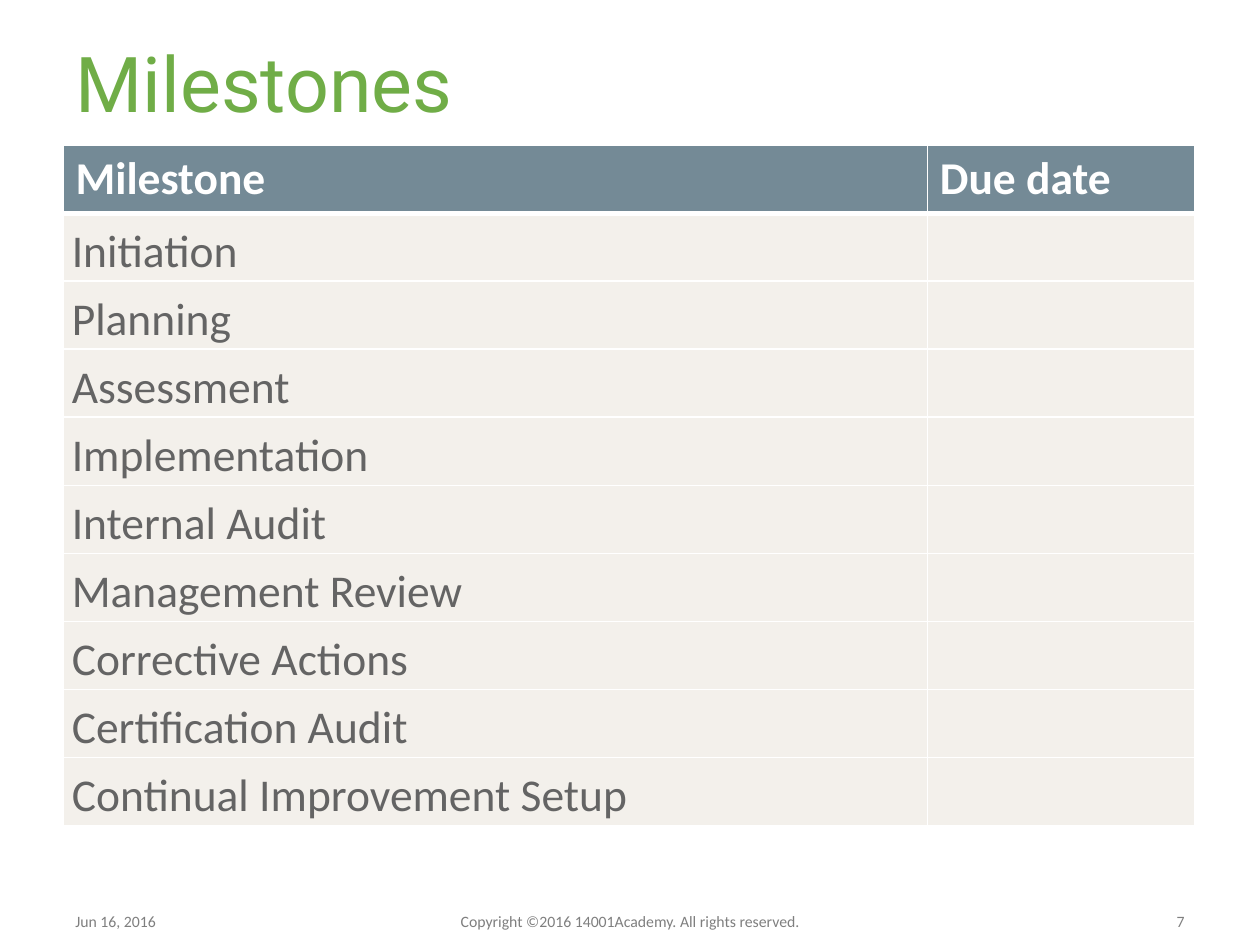
"""Build the project milestones slide with its table and footer."""
from lxml.etree import SubElement
from pptx import Presentation
from pptx.dml.color import RGBColor as Color
from pptx.enum.text import MSO_ANCHOR as Anchor, PP_ALIGN as Align
from pptx.oxml.ns import qn
from pptx.util import Inches, Pt

TITLE = "Milestones"
HEADINGS = ["Milestone", "Due date"]
MILESTONES = [
    "Initiation", "Planning", "Assessment", "Implementation", "Internal Audit",
    "Management Review", "Corrective Actions", "Certification Audit",
    "Continual Improvement Setup",
]
FOOTERS = [
    ("Jun 16, 2016", 0.5, 2.33, Align.LEFT),
    ("Copyright ©2016 14001Academy. All rights reserved.", 3.03, 3.94, Align.CENTER),
    ("7", 7.17, 2.33, Align.RIGHT),
]
COLORS = {"title": "70AD47", "header": "748A96", "body": "F3F0EB",
          "text": "646464", "footer": "7F7F7F", "white": "FFFFFF"}
MARGIN = 0.5
TABLE_TOP = 1.15
COLUMNS = [6.86, 2.12]
ROW_HEIGHT = 0.54
FOOTER_TOP, FOOTER_HEIGHT = 7.13, 0.37


def style(paragraph, size, color, name="Calibri", bold=False):
    font = paragraph.font
    font.size, font.name, font.bold = Pt(size), name, bold
    font.color.rgb = Color.from_string(COLORS[color])


def set_borders(cell, top, bottom):
    properties = cell._tc.get_or_add_tcPr()
    for side, width in (("L", 1), ("R", 1), ("T", top), ("B", bottom)):
        line = SubElement(properties, qn(f"a:ln{side}"), w=str(Pt(width)))
        fill = SubElement(line, qn("a:solidFill"))
        SubElement(fill, qn("a:srgbClr"), val=COLORS["white"])


def fill_cell(cell, text, row):
    header = row == 0
    set_borders(cell, 3 if row == 1 else 1, 3 if header else 1)
    cell.fill.solid()
    cell.fill.fore_color.rgb = Color.from_string(COLORS["header" if header else "body"])
    cell.vertical_anchor = Anchor.MIDDLE
    if not text:
        return
    cell.margin_left = cell.margin_right = Inches(0.1 if header else 0.07)
    cell.margin_top = cell.margin_bottom = Inches(0.05 if header else 0)
    cell.text = text
    paragraph = cell.text_frame.paragraphs[0]
    if not header:
        paragraph.line_spacing = 1.15
    style(paragraph, 26, "white" if header else "text", bold=header)


def add_title(page):
    title = page.shapes.title
    title.left, title.top = Inches(MARGIN), 0
    title.width, title.height = Inches(9), Inches(1.3)
    title.text = TITLE
    title.text_frame.vertical_anchor = Anchor.MIDDLE
    paragraph = title.text_frame.paragraphs[0]
    paragraph.alignment = Align.LEFT
    style(paragraph, 44, "title", "Roboto")


def add_milestones(page):
    rows = [HEADINGS] + [[name, ""] for name in MILESTONES]
    table = page.shapes.add_table(
        len(rows), len(COLUMNS), Inches(MARGIN), Inches(TABLE_TOP),
        Inches(sum(COLUMNS)), Inches(ROW_HEIGHT * len(rows))).table
    for column, width in zip(table.columns, COLUMNS):
        column.width = Inches(width)
    for row, texts in enumerate(rows):
        table.rows[row].height = Inches(ROW_HEIGHT)
        for column, text in enumerate(texts):
            fill_cell(table.cell(row, column), text, row)


def add_footers(page):
    for text, left, width, alignment in FOOTERS:
        box = page.shapes.add_textbox(
            Inches(left), Inches(FOOTER_TOP), Inches(width), Inches(FOOTER_HEIGHT))
        frame = box.text_frame
        frame.word_wrap = True
        frame.vertical_anchor = Anchor.MIDDLE
        frame.text = text
        frame.paragraphs[0].alignment = alignment
        style(frame.paragraphs[0], 9, "footer")


def main():
    deck = Presentation()
    deck.slide_width, deck.slide_height = Inches(10), Inches(7.5)
    page = deck.slides.add_slide(deck.slide_layouts[5])
    add_title(page)
    add_milestones(page)
    add_footers(page)
    deck.save("out.pptx")


if __name__ == "__main__":
    main()
